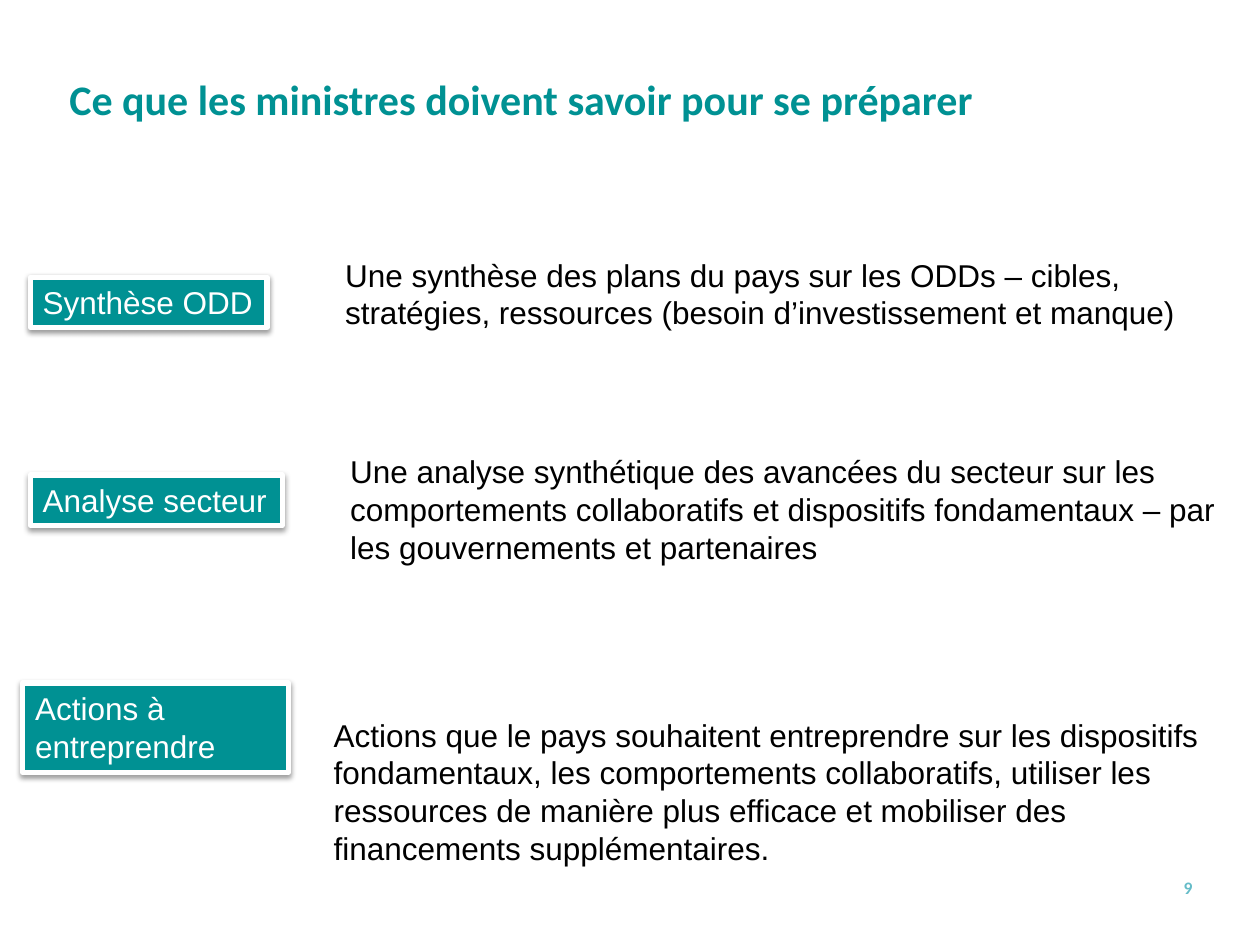
from lxml.etree import SubElement
from pptx import Presentation
from pptx.dml.color import RGBColor
from pptx.enum.shapes import MSO_SHAPE as SHAPE
from pptx.enum.text import MSO_ANCHOR as ANCHOR, PP_ALIGN as ALIGN
from pptx.oxml.ns import qn
from pptx.util import Inches, Pt

TEAL = RGBColor(0x00, 0x91, 0x93)
AQUA = RGBColor(0x65, 0xBC, 0xC8)
WHITE = RGBColor(0xFF, 0xFF, 0xFF)
BLACK = RGBColor(0x00, 0x00, 0x00)

TITLE = {"name": "Calibri", "size": Pt(24), "bold": True}
NUMBER = {"name": "Calibri", "size": Pt(10), "bold": True}
BODY = {"name": "Arial", "size": Pt(18), "bold": False}

ROWS = [
    ("Synthèse ODD", (0.24, 2.2, 1.88, 0.4), False,
     "Une synthèse des plans du pays sur les ODDs – cibles, stratégies, "
     "ressources (besoin d’investissement et manque)",
     (2.64, 1.98, 7.31, 0.71)),
    ("Analyse secteur", (0.24, 3.77, 2, 0.4), False,
     "Une analyse synthétique des avancées du secteur sur les comportements "
     "collaboratifs et dispositifs fondamentaux – par les gouvernements et partenaires",
     (2.68, 3.54, 7.25, 1.01)),
    ("Actions à entreprendre", (0.18, 5.42, 2.11, 0.71), True,
     "Actions que le pays souhaitent entreprendre sur les dispositifs fondamentaux, "
     "les comportements collaboratifs, utiliser les ressources de manière plus "
     "efficace et mobiliser des financements supplémentaires.",
     (2.55, 5.63, 7.37, 1.31)),
]


def write(sp, text, fmt, color, align=ALIGN.LEFT, wrap=True):
    """Fill a shape with one formatted paragraph and return it."""
    tf = sp.text_frame
    tf.word_wrap = wrap
    tf.vertical_anchor = ANCHOR.TOP
    p = tf.paragraphs[0]
    p.alignment = align
    r = p.add_run()
    r.text = text
    for key, value in fmt.items():
        setattr(r.font, key, value)
    r.font.color.rgb = color
    return p


def add_shadow(sp):
    """Give a shape a soft shadow falling straight down."""
    sp.shadow.inherit = False
    effects = sp._element.spPr.find(qn("a:effectLst"))
    shadow = SubElement(effects, qn("a:outerShdw"), blurRad=str(Pt(3.1)),
                        dist=str(Pt(1.6)), dir="5400000", rotWithShape="0")
    color = SubElement(shadow, qn("a:srgbClr"), val=str(BLACK))
    SubElement(color, qn("a:alpha"), val="38000")


def set_title(s, text, box):
    """Place and format the title placeholder."""
    sp = s.shapes.title
    sp.left, sp.top, sp.width, sp.height = map(Inches, box)
    p = write(sp, text, TITLE, TEAL)
    p.line_spacing = Pt(26)


def add_label(s, text, box, wrap):
    """Draw a teal label with a white border."""
    sp = s.shapes.add_shape(SHAPE.RECTANGLE, *map(Inches, box))
    sp.fill.solid()
    sp.fill.fore_color.rgb = TEAL
    sp.line.color.rgb = WHITE
    sp.line.width = Pt(3)
    add_shadow(sp)
    write(sp, text, BODY, WHITE, wrap=wrap)


def add_text(s, text, box, fmt=BODY, color=BLACK, align=ALIGN.LEFT):
    """Add a wrapped text box."""
    sp = s.shapes.add_textbox(*map(Inches, box))
    write(sp, text, fmt, color, align)


def main():
    """Build the slide and save it."""
    prs = Presentation()
    prs.slide_width, prs.slide_height = Inches(10), Inches(7.5)
    s = prs.slides.add_slide(prs.slide_layouts[5])
    set_title(s, "Ce que les ministres doivent savoir pour se préparer",
              (0.45, 0.57, 8.15, 0.85))
    for label, label_box, wrap, text, text_box in ROWS:
        add_label(s, label, label_box, wrap)
        add_text(s, text, text_box)
    add_text(s, "9", (9.21, 6.91, 0.44, 0.27), NUMBER, AQUA, ALIGN.CENTER)
    prs.save("out.pptx")


if __name__ == "__main__":
    main()
